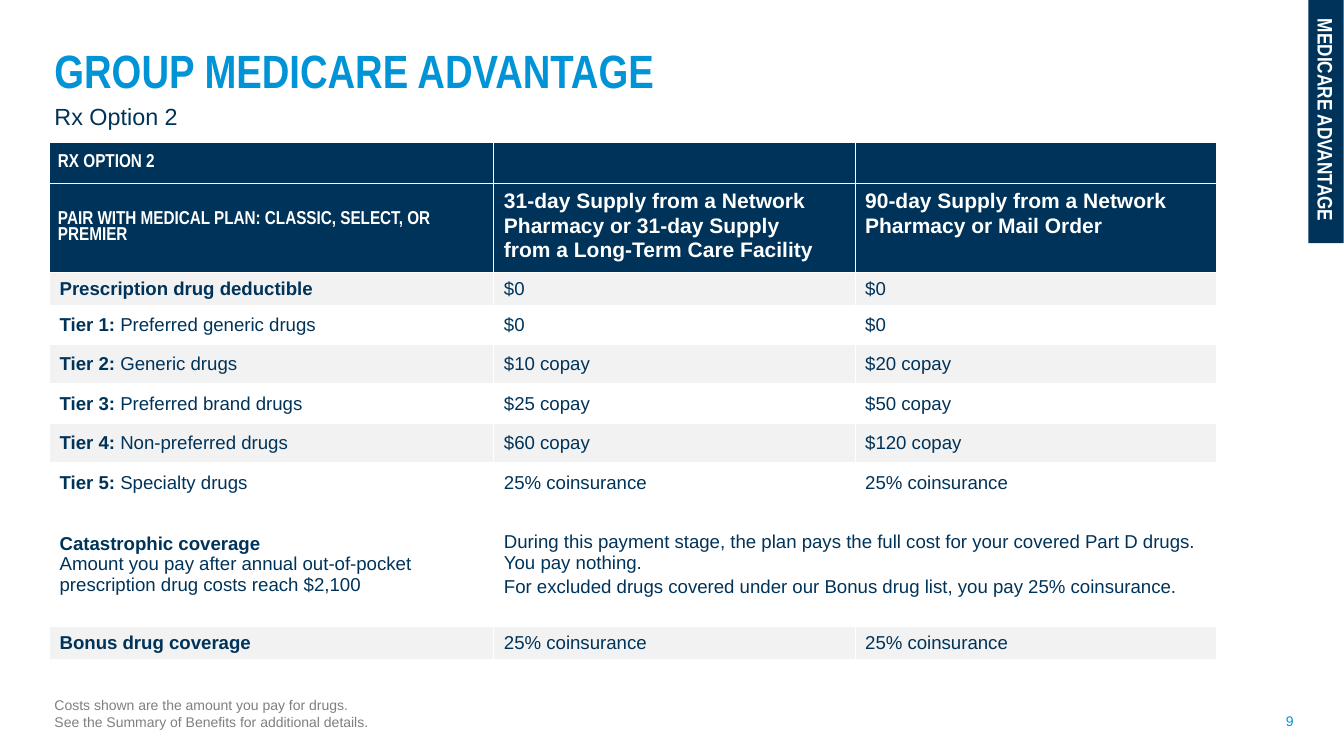
from lxml.etree import SubElement
from pptx import Presentation
from pptx.dml.color import RGBColor
from pptx.enum.shapes import MSO_SHAPE
from pptx.enum.text import MSO_ANCHOR, PP_ALIGN
from pptx.oxml.ns import qn
from pptx.util import Inches, Pt

COLORS = {
    "navy": "003359",
    "blue": "0094D7",
    "gray": "7F7F7F",
    "band": "F2F2F2",
    "white": "FFFFFF",
}
NARROW = "Arial Narrow"
HEADER_INSETS = (0.1, 0.03, 0.05, 0.03)
CELL_INSETS = (0.12, 0.06, 0.12, 0.06)
COLUMN_WIDTHS = [5.29, 4.3, 4.3]
ROW_HEIGHTS = [0.48, 1, 0.37] + [0.47] * 5 + [1.48, 0.36]
HEADINGS = [
    ["RX OPTION 2", "", ""],
    [
        "PAIR WITH MEDICAL PLAN: CLASSIC, SELECT, OR PREMIER",
        "31-day Supply from a Network Pharmacy or 31-day Supply\vfrom a Long-Term Care Facility",
        "90-day Supply from a Network Pharmacy or Mail Order",
    ],
]
BENEFITS = [
    ["**Prescription drug deductible**", "$0", "$0"],
    ["**Tier 1:** Preferred generic drugs", "$0", "$0"],
    ["**Tier 2:** Generic drugs", "$10 copay", "$20 copay"],
    ["**Tier 3:** Preferred brand drugs", "$25 copay", "$50 copay"],
    ["**Tier 4:** Non-preferred drugs", "$60 copay", "$120 copay"],
    ["**Tier 5:** Specialty drugs", "25% coinsurance", "25% coinsurance"],
    [
        "**Catastrophic coverage**\vAmount you pay after annual out-of-pocket "
        "prescription drug costs reach $2,100",
        "During this payment stage, the plan pays the full cost for your covered "
        "Part D drugs. You pay nothing.\n"
        "For excluded drugs covered under our Bonus drug list, you pay 25% coinsurance.",
    ],
    ["**Bonus drug coverage**", "25% coinsurance", "25% coinsurance"],
]
CATASTROPHIC_ROW = 8


def rgb(name):
    return RGBColor.from_string(COLORS[name])


def write_text(frame, text, size=16, color="navy", font="Arial", bold=False,
               align=PP_ALIGN.LEFT, line_spacing=None, gap=0):
    frame.word_wrap = True
    for index, line in enumerate(text.split("\n")):
        paragraph = frame.add_paragraph() if index else frame.paragraphs[0]
        paragraph.alignment = align
        paragraph.line_spacing = line_spacing
        if index and gap:
            paragraph.space_before = Pt(gap)
        for part_index, part in enumerate(line.split("**")):
            for piece_index, piece in enumerate(part.split("\v")):
                if piece_index:
                    paragraph.add_line_break()
                if piece:
                    run = paragraph.add_run()
                    run.text = piece
                    run.font.size = Pt(size)
                    run.font.name = font
                    run.font.bold = bold or part_index % 2 == 1
                    run.font.color.rgb = rgb(color)


def set_insets(holder, insets):
    (holder.margin_left, holder.margin_top,
     holder.margin_right, holder.margin_bottom) = map(Inches, insets)


def add_label(slide, text, place, anchor=MSO_ANCHOR.TOP,
              insets=(0.1, 0.05, 0.1, 0.05), **text_format):
    frame = slide.shapes.add_textbox(*map(Inches, place)).text_frame
    frame.vertical_anchor = anchor
    set_insets(frame, insets)
    write_text(frame, text, **text_format)


def add_section_tab(slide, text):
    tab = slide.shapes.add_shape(
        MSO_SHAPE.RECTANGLE, Inches(14.32), Inches(1.22), Inches(2.93), Inches(0.42))
    tab.rotation = 90
    tab.shadow.inherit = False
    tab.fill.solid()
    tab.fill.fore_color.rgb = rgb("navy")
    tab.line.fill.background()
    frame = tab.text_frame
    frame.vertical_anchor = MSO_ANCHOR.MIDDLE
    set_insets(frame, (0.2, 0.05, 0.2, 0.05))
    write_text(frame, text, size=18, color="white", font=NARROW, bold=True,
               align=PP_ALIGN.CENTER)


def style_cell(cell, fill, insets=CELL_INSETS, anchor=MSO_ANCHOR.MIDDLE):
    properties = cell._tc.get_or_add_tcPr()
    for side in ("a:lnL", "a:lnR", "a:lnT", "a:lnB"):
        border = SubElement(properties, qn(side), w=str(Pt(1)))
        border_fill = SubElement(border, qn("a:solidFill"))
        SubElement(border_fill, qn("a:srgbClr"), val=COLORS["white"])
    cell.fill.solid()
    cell.fill.fore_color.rgb = rgb(fill)
    cell.vertical_anchor = anchor
    set_insets(cell, insets)


def add_benefits_table(slide):
    table = slide.shapes.add_table(
        len(ROW_HEIGHTS), len(COLUMN_WIDTHS), Inches(0.59), Inches(1.7),
        Inches(sum(COLUMN_WIDTHS)), Inches(sum(ROW_HEIGHTS))).table
    table.first_row = False
    table.horz_banding = False
    for column, width in zip(table.columns, COLUMN_WIDTHS):
        column.width = Inches(width)
    for row, height in zip(table.rows, ROW_HEIGHTS):
        row.height = Inches(height)
    table.cell(CATASTROPHIC_ROW, 1).merge(table.cell(CATASTROPHIC_ROW, 2))

    for row_index, texts in enumerate(HEADINGS):
        for column_index, text in enumerate(texts):
            cell = table.cell(row_index, column_index)
            if column_index == 0:
                style_cell(cell, "navy", HEADER_INSETS)
                write_text(cell.text_frame, text, color="white", font=NARROW,
                           bold=True, line_spacing=0.9)
            else:
                style_cell(cell, "navy", anchor=MSO_ANCHOR.TOP)
                write_text(cell.text_frame, text, size=18, color="white",
                           bold=True, line_spacing=1.05)

    for row_index, texts in enumerate(BENEFITS, start=len(HEADINGS)):
        banded = row_index % 2 == 0 and row_index != CATASTROPHIC_ROW
        fill = "band" if banded or row_index == len(ROW_HEIGHTS) - 1 else "white"
        for column_index, text in enumerate(texts):
            cell = table.cell(row_index, column_index)
            style_cell(cell, fill)
            write_text(cell.text_frame, text, gap=3)


def main():
    presentation = Presentation()
    presentation.slide_width = Inches(16)
    presentation.slide_height = Inches(9)
    slide = presentation.slides.add_slide(presentation.slide_layouts[6])

    add_label(slide, "9", (14.94, 8.34, 0.56, 0.48), MSO_ANCHOR.MIDDLE,
              size=12, color="blue", align=PP_ALIGN.RIGHT)
    add_label(slide, "Costs shown are the amount you pay for drugs.\n"
              "See the Summary of Benefits for additional details.",
              (0.55, 8.05, 10.15, 0.69), MSO_ANCHOR.BOTTOM, size=12, color="gray")
    add_label(slide, "GROUP MEDICARE ADVANTAGE", (0.55, 0.2, 14.27, 1.02),
              MSO_ANCHOR.BOTTOM, size=40, color="blue", font=NARROW, bold=True,
              line_spacing=0.9)
    add_label(slide, "Rx Option 2", (0.55, 1.22, 14.27, 0.42),
              insets=(0.1, 0, 0.1, 0.05), size=20)
    add_benefits_table(slide)
    add_section_tab(slide, "MEDICARE ADVANTAGE")
    presentation.save("out.pptx")


if __name__ == "__main__":
    main()
